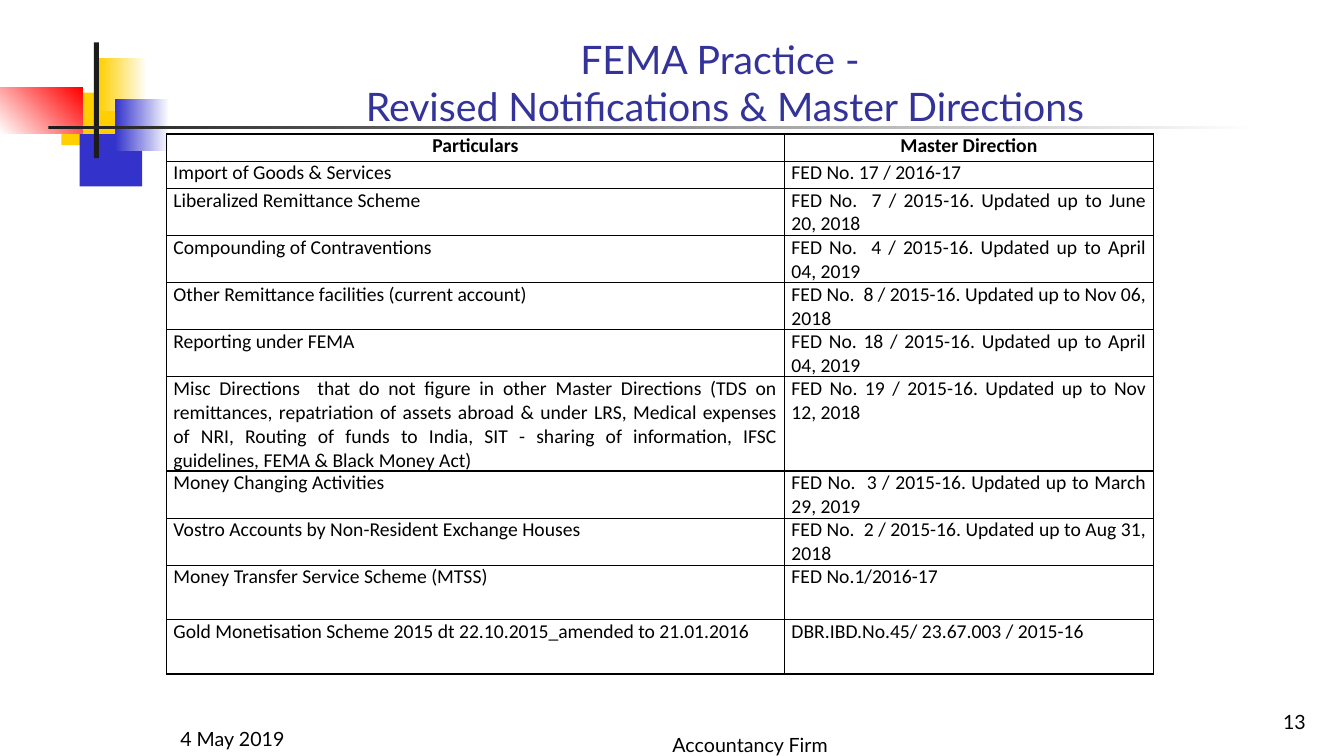
from lxml.etree import SubElement
from pptx import Presentation
from pptx.dml.color import RGBColor
from pptx.enum.shapes import MSO_SHAPE as Shape
from pptx.enum.text import MSO_ANCHOR as Anchor, PP_ALIGN as Align
from pptx.oxml.ns import qn
from pptx.util import Inches, Pt

BLACK = RGBColor(0x00, 0x00, 0x00)
WHITE = RGBColor(0xFF, 0xFF, 0xFF)
CHARCOAL = RGBColor(0x1C, 0x1C, 0x1C)
YELLOW = RGBColor(0xFF, 0xCF, 0x01)
BLUE = RGBColor(0x33, 0x33, 0xCC)
RED = RGBColor(0xFF, 0x00, 0x00)
TITLE_BLUE = RGBColor(0x33, 0x33, 0x99)

# Left, top, width, height, colours (two make a gradient), gradient angle
ORNAMENTS = [
    (0.61, 0.92, 0.64, 0.52, [YELLOW], 0),
    (0.79, 1.33, 0.62, 0.52, [BLUE], 0),
    (0.98, 0.58, 0.48, 0.52, [YELLOW, WHITE], 0),
    (1.14, 0.98, 0.54, 0.52, [BLUE, WHITE], 0),
    (0, 0.87, 0.82, 0.46, [WHITE, RED], 45),
    (0.93, 0.42, 0.05, 1.15, [CHARCOAL], 0),
    (0.48, 1.25, 12, 0.03, [CHARCOAL, WHITE], 0),
]

TITLE_FORMAT = {"name": "Lato", "size": Pt(28)}
FOOTER_FORMAT = {"name": "Lato", "size": Pt(14)}
CELL_FORMAT = {"name": "Calibri", "size": Pt(14), "bold": False}
HEADER_FORMAT = {**CELL_FORMAT, "bold": True}
CELL_MARGINS = {
    "margin_left": Inches(0.07), "margin_right": Inches(0.07),
    "margin_top": 0, "margin_bottom": 0,
}

COLUMN_WIDTHS = [6.13, 3.66]
# Row height, particulars, master direction
DIRECTIONS = [
    (0.27, "Particulars", "Master Direction"),
    (0.27, "Import of Goods & Services", "FED No. 17 / 2016-17"),
    (0.45, "Liberalized Remittance Scheme",
     "FED No.  7 / 2015-16. Updated up to June 20, 2018"),
    (0.45, "Compounding of Contraventions",
     "FED No.  4 / 2015-16. Updated up to April 04, 2019"),
    (0.45, "Other Remittance facilities (current account)",
     "FED No.  8 / 2015-16. Updated up to Nov 06, 2018"),
    (0.45, "Reporting under FEMA",
     "FED No. 18 / 2015-16. Updated up to April 04, 2019"),
    (0.9, "Misc Directions  that do not figure in other Master Directions "
     "(TDS on remittances, repatriation of assets abroad & under LRS, "
     "Medical expenses of NRI, Routing of funds to India, SIT - sharing of "
     "information, IFSC guidelines, FEMA & Black Money Act) ",
     "FED No. 19 / 2015-16. Updated up to Nov 12, 2018"),
    (0.45, "Money Changing Activities",
     "FED No.  3 / 2015-16. Updated up to March 29, 2019"),
    (0.45, "Vostro Accounts by Non-Resident Exchange Houses",
     "FED No.  2 / 2015-16. Updated up to Aug 31, 2018"),
    (0.54, "Money Transfer Service Scheme (MTSS)", "FED No.1/2016-17"),
    (0.54, "Gold Monetisation Scheme 2015 dt 22.10.2015_amended to 21.01.2016",
     "DBR.IBD.No.45/ 23.67.003 / 2015-16"),
]


def set_attributes(target, values):
    for name, value in values.items():
        setattr(target, name, value)


def write_text(para, text, align, font_format, color):
    para.text = text
    para.alignment = align
    for span in para.runs:
        set_attributes(span.font, font_format)
        span.font.color.rgb = color


def add_ornament(page, left, top, width, height, colors, angle):
    block = page.shapes.add_shape(
        Shape.RECTANGLE, Inches(left), Inches(top), Inches(width), Inches(height))
    block.shadow.inherit = False
    block.line.fill.background()
    if len(colors) == 1:
        block.fill.solid()
        block.fill.fore_color.rgb = colors[0]
    else:
        block.fill.gradient()
        block.fill.gradient_angle = angle
        for stop, color in zip(block.fill.gradient_stops, colors):
            stop.color.rgb = color


def add_text(page, left, top, width, height, text, align, font_format, color=BLACK):
    box = page.shapes.add_textbox(
        Inches(left), Inches(top), Inches(width), Inches(height))
    frame = box.text_frame
    set_attributes(frame, {"word_wrap": True, "vertical_anchor": Anchor.BOTTOM})
    write_text(frame.paragraphs[0], text, align, font_format, color)


def add_borders(cell):
    properties = cell._tc.get_or_add_tcPr()
    for position, side in enumerate(("a:lnL", "a:lnR", "a:lnT", "a:lnB")):
        line = SubElement(properties, qn(side), w=str(Pt(1)))
        fill = SubElement(line, qn("a:solidFill"))
        SubElement(fill, qn("a:srgbClr"), val=str(BLACK))
        # Borders come before the cell fill in the schema
        properties.insert(position, line)


def add_directions_table(page, left, top):
    heights = [row[0] for row in DIRECTIONS]
    table = page.shapes.add_table(
        len(DIRECTIONS), len(COLUMN_WIDTHS), Inches(left), Inches(top),
        Inches(sum(COLUMN_WIDTHS)), Inches(sum(heights))).table
    set_attributes(table, {"first_row": False, "horz_banding": False})
    for column, width in zip(table.columns, COLUMN_WIDTHS):
        column.width = Inches(width)
    for index, (height, *texts) in enumerate(DIRECTIONS):
        table.rows[index].height = Inches(height)
        align = Align.JUSTIFY if index else Align.CENTER
        font_format = CELL_FORMAT if index else HEADER_FORMAT
        for cell, text in zip(table.rows[index].cells, texts):
            set_attributes(cell, CELL_MARGINS)
            cell.fill.background()
            add_borders(cell)
            write_text(cell.text_frame.paragraphs[0], text, align, font_format, BLACK)


def main():
    deck = Presentation()
    set_attributes(deck, {"slide_width": Inches(13.33), "slide_height": Inches(7.5)})
    page = deck.slides.add_slide(deck.slide_layouts[6])

    # Corner decoration and title rule
    for ornament in ORNAMENTS:
        add_ornament(page, *ornament)

    # Footer: date, firm, page number
    add_text(page, 1.69, 7.05, 2.78, 0.44, "4 May 2019", Align.LEFT, FOOTER_FORMAT)
    add_text(page, 5.33, 7.05, 4.22, 0.5, "Accountancy Firm", Align.CENTER, FOOTER_FORMAT)
    add_text(page, 10.27, 6.83, 2.78, 0.5, "13", Align.RIGHT, FOOTER_FORMAT)

    # Title
    add_text(page, 2.93, 0.23, 8.52, 1.1,
             "FEMA Practice - \vRevised Notifications & Master Directions",
             Align.CENTER, TITLE_FORMAT, TITLE_BLUE)

    # Table of master directions
    add_directions_table(page, 1.65, 1.33)

    deck.save("out.pptx")


if __name__ == "__main__":
    main()
